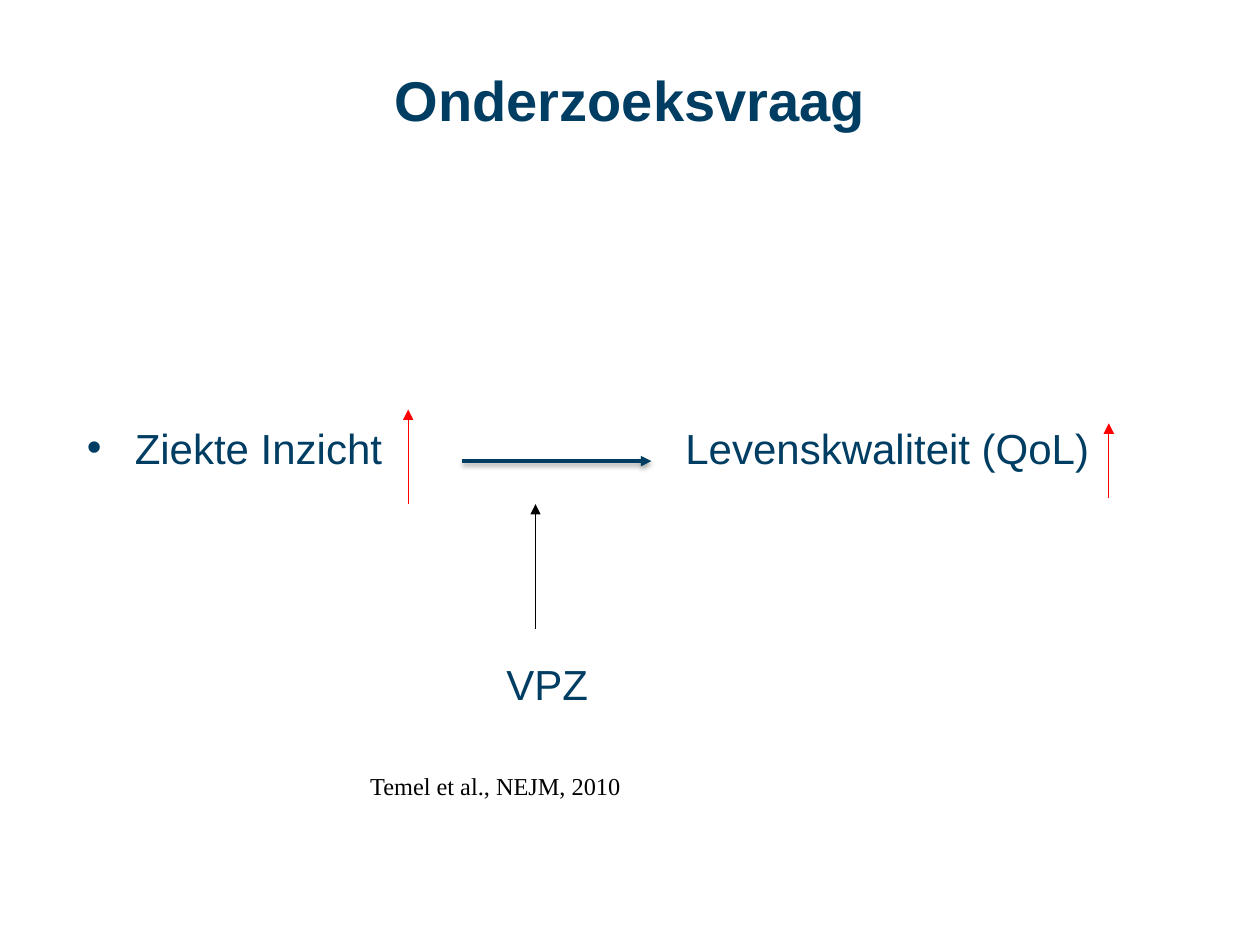
from lxml.etree import SubElement
from pptx import Presentation
from pptx.dml.color import RGBColor
from pptx.enum.shapes import MSO_CONNECTOR
from pptx.enum.text import MSO_ANCHOR, PP_ALIGN
from pptx.oxml import parse_xml
from pptx.oxml.ns import nsdecls, qn
from pptx.util import Inches, Pt

NAVY = RGBColor(0x00, 0x3D, 0x62)
RED = RGBColor(0xFF, 0x00, 0x00)
BLACK = RGBColor(0x00, 0x00, 0x00)

W, H = 10, 7.5
MARGIN = 0.69
INDENT = 0.38
ROW_H = 0.4
CLAIM_Y, FACTOR_Y = 3.35, 5.23

TITLE = ("Onderzoeksvraag", MARGIN, 0.44, W - 2 * MARGIN, 0.69)
CONCEPTS = [
    ("Ziekte Inzicht", MARGIN, CLAIM_Y, 2.5, True),
    ("Levenskwaliteit (QoL)", 5.44, CLAIM_Y, 3.3, False),
    ("VPZ", 4.02, FACTOR_Y, 1, False),
]
CITATION = ("Temel et al., NEJM, 2010", 2.84, 5.85, 4.93, 0.91)
ARROWS = [
    ((3.67, 3.66), (5.17, 3.66), NAVY, 2, True),
    ((3.24, 4), (3.24, 3.25), RED, 0.75, False),
    ((8.8, 3.95), (8.8, 3.36), RED, 0.75, False),
    ((4.25, 4.99), (4.25, 4), BLACK, 0.75, False),
]
SHADOW = (
    f'<a:outerShdw {nsdecls("a")} blurRad="{Pt(3.1)}" dist="{Pt(1.6)}" '
    'dir="5400000" rotWithShape="0"><a:srgbClr val="000000">'
    '<a:alpha val="38000"/></a:srgbClr></a:outerShdw>'
)


def add_text(s, text, x, y, w, h, size=24, color=NAVY, font="Arial",
             bold=False, bullet=False, inset=(0, 0),
             align=PP_ALIGN.LEFT, anchor=MSO_ANCHOR.MIDDLE):
    tf = s.shapes.add_textbox(*map(Inches, (x, y, w, h))).text_frame
    tf.word_wrap = True
    tf.vertical_anchor = anchor
    tf.margin_left = tf.margin_right = Inches(inset[0])
    tf.margin_top = tf.margin_bottom = Inches(inset[1])
    p = tf.paragraphs[0]
    p.alignment = align
    if bullet:
        pPr = p._p.get_or_add_pPr()
        pPr.set("marL", str(Inches(INDENT)))
        pPr.set("indent", str(-Inches(INDENT)))
        SubElement(pPr, qn("a:buFont"), typeface="Arial")
        SubElement(pPr, qn("a:buChar"), char="•")
    r = p.add_run()
    r.text = text
    r.font.name, r.font.size, r.font.bold = font, Pt(size), bold
    r.font.color.rgb = color
    return r


def add_arrow(s, start, end, color, width, shadow):
    line = s.shapes.add_connector(
        MSO_CONNECTOR.STRAIGHT, *map(Inches, start + end))
    line.line.color.rgb = color
    line.line.width = Pt(width)
    SubElement(line.line._get_or_add_ln(), qn("a:tailEnd"), type="triangle")
    effects = SubElement(line._element.spPr, qn("a:effectLst"))
    if shadow:
        effects.append(parse_xml(SHADOW))


prs = Presentation()
prs.slide_width, prs.slide_height = Inches(W), Inches(H)
s = prs.slides.add_slide(prs.slide_layouts[6])

add_text(s, *TITLE, size=32, bold=True, align=PP_ALIGN.CENTER)
for text, x, y, w, bullet in CONCEPTS:
    add_text(s, text, x, y, w, ROW_H, bullet=bullet)
r = add_text(s, *CITATION, color=BLACK, font="Times New Roman",
             inset=(0.1, 0.05), anchor=MSO_ANCHOR.TOP)
r.font._element.set("baseline", "-25000")
for arrow in ARROWS:
    add_arrow(s, *arrow)

prs.save("out.pptx")
